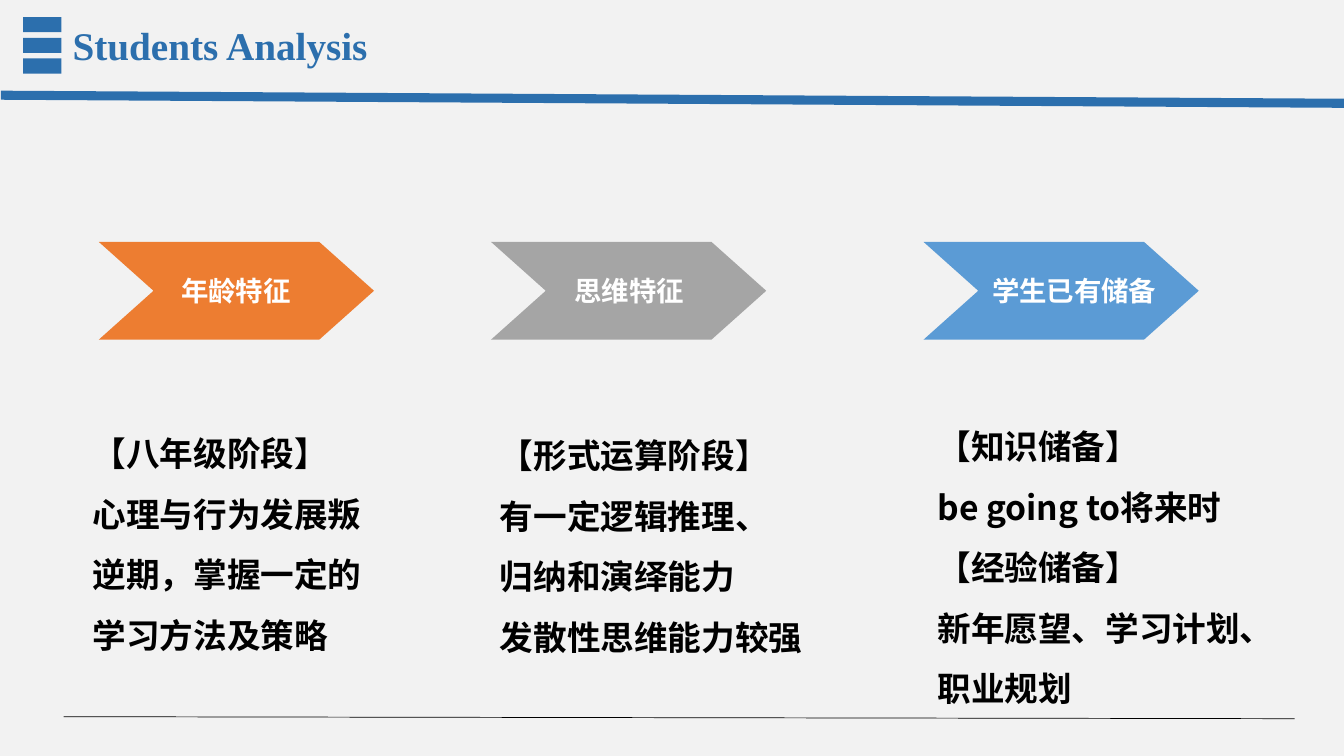
from lxml import etree
from pptx import Presentation
from pptx.dml.color import RGBColor
from pptx.enum.shapes import MSO_CONNECTOR, MSO_SHAPE
from pptx.enum.text import PP_ALIGN
from pptx.oxml.ns import qn
from pptx.util import Inches, Pt

RECT, CHEVRON = MSO_SHAPE.RECTANGLE, MSO_SHAPE.CHEVRON
STRAIGHT = MSO_CONNECTOR.STRAIGHT
LEFT, CENTER = PP_ALIGN.LEFT, PP_ALIGN.CENTER
CJK, SERIF = "Noto Sans CJK SC", "Times New Roman"
BLUE = "2C6FAD"

COLUMNS = [
    ("年龄特征", "ED7D31", (0.98, 2.4), (1.37, 1.94), (0.82, 4.05, 3.01, 2.52),
     ["【八年级阶段】", "心理与行为发展叛逆期，掌握一定的学习方法及策略"]),
    ("思维特征", "A5A5A5", (4.87, 2.4), (5.51, 1.46), (4.86, 4.07, 3.4, 2.52),
     ["【形式运算阶段】", "有一定逻辑推理、", "归纳和演绎能力", "发散性思维能力较强"]),
    ("学生已有储备", "5B9BD5", (9.16, 2.4), (9.74, 1.83), (9.2, 3.98, 3.74, 3.13),
     ["【知识储备】", "be going to将来时", "【经验储备】", "新年愿望、学习计划、职业规划"]),
]


def rgb(value):
    return RGBColor.from_string(value)


def paint(sp, color):
    sp.shadow.inherit = False
    sp.fill.solid()
    sp.fill.fore_color.rgb = rgb(color)
    sp.line.fill.background()


def add_shape(s, kind, box, color):
    sp = s.shapes.add_shape(kind, *map(Inches, box))
    paint(sp, color)
    return sp


def add_text(s, lines, box, size=24, color="000000", font=CJK, align=LEFT,
             spacing=1.0, insets=(0.1, 0.05, 0.1, 0.05), wrap=True):
    tf = s.shapes.add_textbox(*map(Inches, box)).text_frame
    tf.word_wrap = wrap
    tf.margin_left, tf.margin_top, tf.margin_right, tf.margin_bottom = map(Inches, insets)
    for i, line in enumerate(lines):
        p = tf.paragraphs[0] if i == 0 else tf.add_paragraph()
        p.alignment = align
        p.line_spacing = spacing
        r = p.add_run()
        r.text = line
        r.font.size = Pt(size)
        r.font.bold = True
        r.font.color.rgb = rgb(color)
        r.font.name = font
        etree.SubElement(r.font._element, qn("a:ea"), typeface=font)


def add_header(s, left, top, width):
    for i in range(3):
        add_shape(s, RECT, (left + 0.22, top + 0.17 + i * 0.205, 0.38, 0.15), BLUE)
    add_text(s, ["Students Analysis"], (left + 0.71, top + 0.2, 6.8, 0.48),
             size=28, color=BLUE, font=SERIF, insets=(0, 0.01, 0, 0))
    corners = [(left + x, top + y) for x, y in
               [(0, 0.9), (width, 0.98), (width, 1.07), (0, 0.99)]]
    points = [(Inches(x), Inches(y)) for x, y in corners]
    fb = s.shapes.build_freeform(*points[0])
    fb.add_line_segments(points[1:], close=True)
    paint(fb.convert_to_shape(), BLUE)


def add_column(s, label, color, corner, label_span, body_box, lines):
    left, top = corner
    arrow = add_shape(s, CHEVRON, (left, top, 2.73, 0.97), color)
    arrow.adjustments[0] = 0.56
    label_left, label_width = label_span
    add_text(s, [label], (label_left, top + 0.27, label_width, 0.43), size=19.6,
             color="FFFFFF", align=CENTER, wrap=False)
    add_text(s, lines, body_box, spacing=1.5)


def add_footer_line(s, left, top, right, bottom):
    line = s.shapes.add_connector(STRAIGHT, *map(Inches, (left, top, right, bottom)))
    line.line.color.rgb = rgb("000000")
    line.line.width = Pt(0.5)
    etree.SubElement(line._element.spPr, qn("a:effectLst"))


def main():
    prs = Presentation()
    prs.slide_width, prs.slide_height = Inches(13.33), Inches(7.5)
    s = prs.slides.add_slide(prs.slide_layouts[6])
    s.background.fill.solid()
    s.background.fill.fore_color.rgb = rgb("F2F2F2")
    add_header(s, 0.01, 0, 13.32)
    for column in COLUMNS:
        add_column(s, *column)
    add_footer_line(s, 0.63, 7.11, 12.84, 7.13)
    prs.save("out.pptx")


if __name__ == "__main__":
    main()
